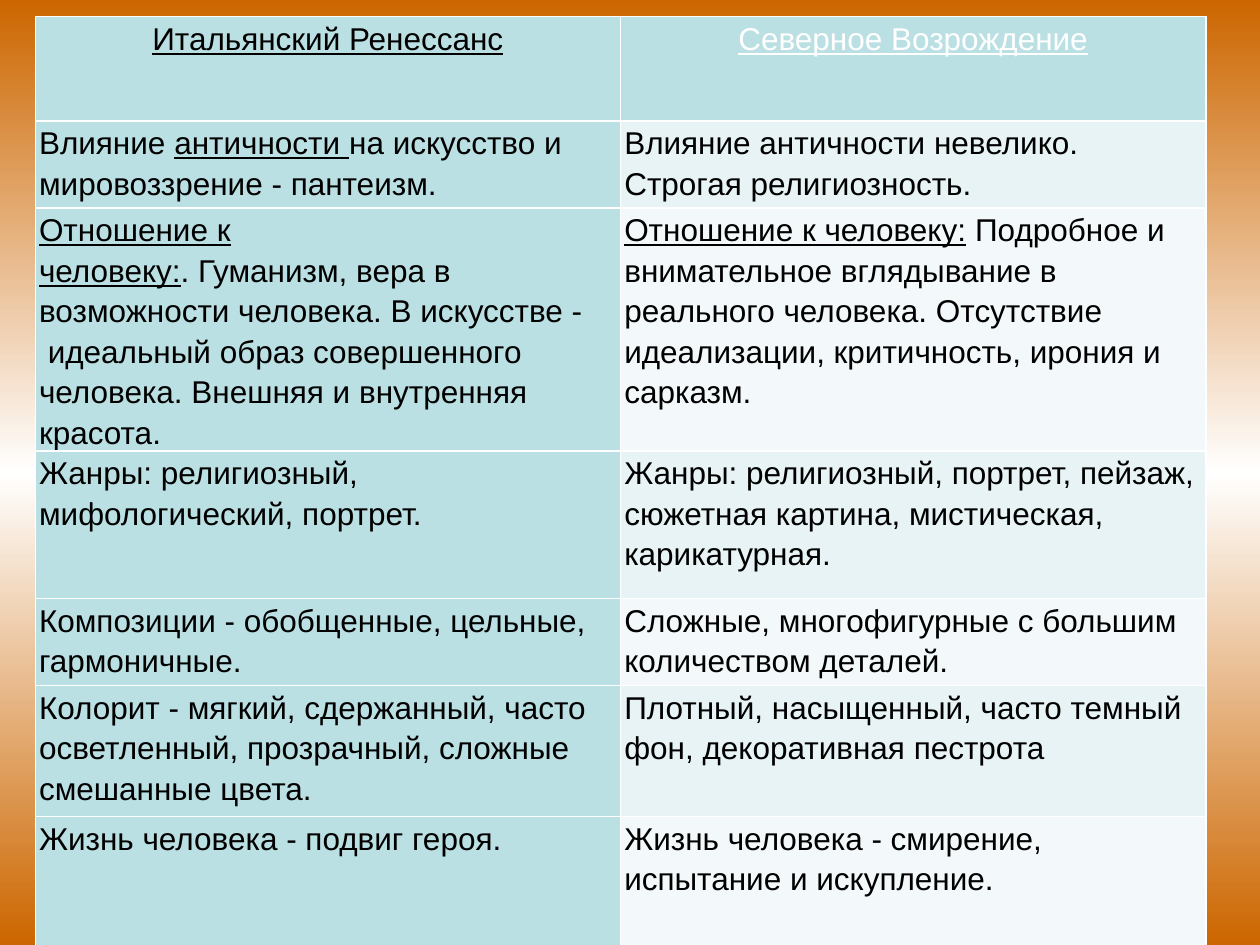
from copy import deepcopy

from lxml.etree import SubElement
from pptx import Presentation
from pptx.dml.color import RGBColor
from pptx.enum.text import PP_ALIGN
from pptx.oxml.ns import qn
from pptx.util import Inches, Pt

ORANGE = RGBColor(0xCC, 0x66, 0x00)
WHITE = RGBColor(0xFF, 0xFF, 0xFF)
BLACK = RGBColor(0x00, 0x00, 0x00)
TEAL = RGBColor(0xBB, 0xE0, 0xE3)
BAND_COLORS = (RGBColor(0xF3, 0xF9, 0xFA), RGBColor(0xE7, 0xF3, 0xF4))
NO_BREAK_SPACE = chr(160)  # marked by ~ in the texts below

# Each row: height, Italian runs, Northern runs; a run is (text, underlined)
ROWS = [
    (0.83, [("Итальянский Ренессанс", True)],
     [("Северное Возрождение", True)]),
    (0.69, [("Влияние~", False), ("античности~", True),
            ("на искусство и мировоззрение - пантеизм.", False)],
     [("Влияние античности невелико. Строгая религиозность.", False)]),
    (1.93, [("Отношение к человеку:", True),
            (".~Гуманизм,~вера в возможности человека. В искусстве -~идеальный "
             "образ~совершенного человека. Внешняя и внутренняя красота.", False)],
     [("Отношение к человеку:", True),
      (" Подробное и внимательное~вглядывание~в реального человека. Отсутствие "
       "идеализации,~критичность, ирония и сарказм.", False)]),
    (1.17, [("Жанры: религиозный, мифологический, портрет.", False)],
     [("Жанры: религиозный, портрет, пейзаж, сюжетная картина, мистическая, "
       "карикатурная.", False)]),
    (0.69, [("Композиции - обобщенные, цельные, гармоничные.", False)],
     [("Сложные, многофигурные с большим количеством деталей.", False)]),
    (1.04, [("Колорит - мягкий, сдержанный, часто осветленный, прозрачный, "
             "сложные смешанные цвета.", False)],
     [("Плотный, насыщенный, часто темный фон, декоративная пестрота", False)]),
    (1.12, [("Жизнь человека - подвиг героя.", False)],
     [("Жизнь человека - смирение, испытание и искупление.", False)]),
]


def add_borders(cell):
    """Draw a thin white line on all four sides of a cell."""
    properties = cell._tc.get_or_add_tcPr()
    for position, side in enumerate(("lnL", "lnR", "lnT", "lnB")):
        line = SubElement(properties, qn(f"a:{side}"), w=str(Pt(1)))
        fill = SubElement(line, qn("a:solidFill"))
        SubElement(fill, qn("a:srgbClr"), val=str(WHITE))
        properties.insert(position, line)


prs = Presentation()
prs.slide_width, prs.slide_height = Inches(10), Inches(7.5)
slide = prs.slides.add_slide(prs.slide_layouts[6])

# Background: orange, white in the middle, orange
backdrop = slide.background.fill
backdrop.gradient()
backdrop.gradient_angle = 90
stop_list = next(slide._element.iter(qn("a:gsLst")))
stop_list.append(deepcopy(stop_list[0]))
for stop, position, color in zip(backdrop.gradient_stops, (0, 0.5, 1),
                                 (ORANGE, WHITE, ORANGE)):
    stop.position = position
    stop.color.rgb = color

# Comparison table with two equal columns
total_height = sum(height for height, _, _ in ROWS)
comparison = slide.shapes.add_table(len(ROWS), 2, Inches(0.28), Inches(0.13),
                                    Inches(9.29), Inches(total_height)).table

for row, (height, *sides) in enumerate(ROWS):
    comparison.rows[row].height = Inches(height)
    for col, runs in enumerate(sides):
        cell = comparison.cell(row, col)
        cell.margin_left = cell.margin_right = Inches(0.03)
        cell.margin_top = cell.margin_bottom = 0
        cell.fill.solid()
        is_teal = row == 0 or col == 0
        cell.fill.fore_color.rgb = TEAL if is_teal else BAND_COLORS[row % 2]
        add_borders(cell)

        paragraph = cell.text_frame.paragraphs[0]
        paragraph.alignment = PP_ALIGN.CENTER if row == 0 else PP_ALIGN.LEFT
        paragraph.line_spacing = 1.15
        paragraph.space_after = Pt(10)
        for text, underlined in runs:
            run = paragraph.add_run()
            run.text = text.replace("~", NO_BREAK_SPACE)
            run.font.name = "Arial"
            run.font.size = Pt(18)
            run.font.bold = False
            run.font.underline = underlined
            run.font.color.rgb = WHITE if (row, col) == (0, 1) else BLACK

prs.save("out.pptx")
